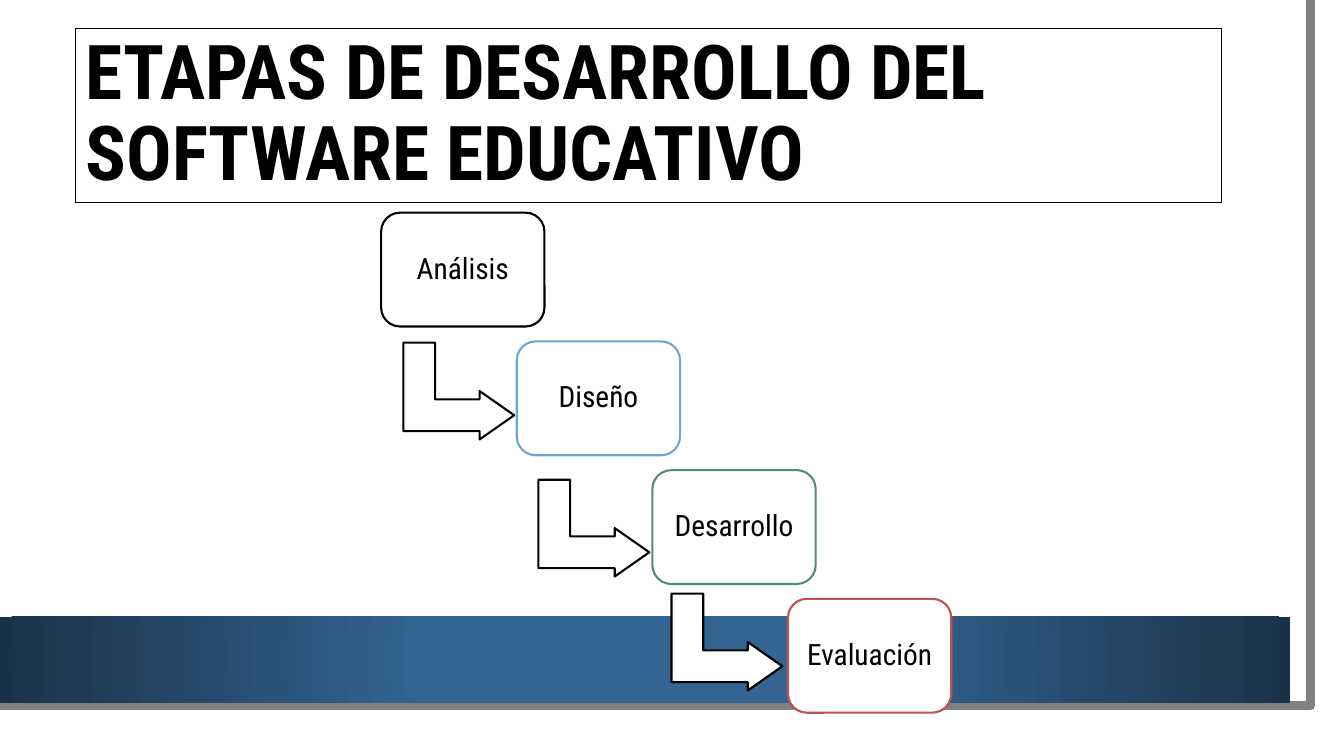
"""Build a slide showing the stages of educational software development."""
from lxml import etree
from pptx import Presentation
from pptx.dml.color import RGBColor
from pptx.enum.shapes import MSO_SHAPE
from pptx.enum.text import MSO_ANCHOR, MSO_AUTO_SIZE, PP_ALIGN
from pptx.oxml.ns import qn
from pptx.util import Inches, Pt

RECT, ROUNDED, BENT = MSO_SHAPE.RECTANGLE, MSO_SHAPE.ROUNDED_RECTANGLE, MSO_SHAPE.BENT_UP_ARROW
LEFT, CENTER = PP_ALIGN.LEFT, PP_ALIGN.CENTER
MIDDLE, NO_FIT = MSO_ANCHOR.MIDDLE, MSO_AUTO_SIZE.NONE
FONT = "Roboto Condensed"
WHITE = RGBColor(0xFF, 0xFF, 0xFF)
BLACK = RGBColor(0x00, 0x00, 0x00)
GRAY = RGBColor(0x80, 0x80, 0x80)
BAND_LIGHT = RGBColor(0x34, 0x64, 0x92)
BAND_DARK = RGBColor(0x1A, 0x32, 0x49)
BLUE = RGBColor(0x6D, 0xA5, 0xD4)
GREEN = RGBColor(0x53, 0x8C, 0x79)
RED = RGBColor(0xBB, 0x53, 0x54)

STAGES = [("Análisis", BLACK), ("Diseño", BLUE), ("Desarrollo", GREEN), ("Evaluación", RED)]
ARROWS = [(4.07, 3.33), (5.41, 4.69), (6.73, 5.82)]
BOX_LEFT, BOX_TOP, BOX_W, BOX_H = 3.78, 2.11, 1.62, 1.13
STEP_X, STEP_Y = 1.345, 1.277


def write(sp, text, size, bold=False, align=LEFT):
    tf = sp.text_frame
    tf.word_wrap = True
    tf.auto_size = NO_FIT
    tf.vertical_anchor = MIDDLE
    p = tf.paragraphs[0]
    p.alignment = align
    p.line_spacing = 0.9
    r = p.add_run()
    r.text = text
    r.font.name = FONT
    r.font.size = Pt(size)
    r.font.bold = bold
    r.font.color.rgb = BLACK


def outline(sp, color, width):
    sp.fill.solid()
    sp.fill.fore_color.rgb = WHITE
    sp.line.color.rgb = color
    sp.line.width = Pt(width)


prs = Presentation()
prs.slide_width, prs.slide_height = Inches(13.33), Inches(7.5)
s = prs.slides.add_slide(prs.slide_layouts[5])

builder = s.shapes.build_freeform(12.82, 0, scale=Inches(1))
builder.add_line_segments([(12.85, 7.02), (0, 7.01)], close=False)
frame = builder.convert_to_shape()
frame.shadow.inherit = False
frame.fill.background()
frame.line.color.rgb = GRAY
frame.line.width = Pt(6.5)

band = s.shapes.add_shape(RECT, 0, Inches(6.12), Inches(12.8), Inches(0.85))
band.shadow.inherit = False
band.line.fill.background()
band.fill.gradient()
for stop, color, position in zip(band.fill.gradient_stops, (BAND_LIGHT, BAND_DARK), (0.34, 1)):
    stop.color.rgb = color
    stop.position = position
grad = band.fill._xPr.find(qn("a:gradFill"))
lin = grad.find(qn("a:lin"))
radial = etree.Element(qn("a:path"), {"path": "circle"})
etree.SubElement(radial, qn("a:fillToRect"), dict.fromkeys("ltrb", "50000"))
grad.replace(lin, radial)

title = s.shapes.title
title.left, title.top, title.width, title.height = map(Inches, (0.75, 0.28, 11.37, 1.73))
outline(title, BLACK, 0.75)
write(title, "ETAPAS DE DESARROLLO DEL SOFTWARE EDUCATIVO", 54, bold=True)

for left, top in ARROWS:
    arrow = s.shapes.add_shape(BENT, Inches(left), Inches(top), Inches(0.96), Inches(1.1))
    arrow.shadow.inherit = False
    arrow.rotation = 90
    for i, value in enumerate((0.328, 0.25, 0.358)):
        arrow.adjustments[i] = value
    outline(arrow, BLACK, 1.5)

for i, (name, color) in enumerate(STAGES):
    box = s.shapes.add_shape(ROUNDED, Inches(BOX_LEFT + i * STEP_X), Inches(BOX_TOP + i * STEP_Y),
                             Inches(BOX_W), Inches(BOX_H))
    box.shadow.inherit = False
    outline(box, color, 1.5)
    tf = box.text_frame
    tf.margin_left = tf.margin_right = tf.margin_top = tf.margin_bottom = Inches(0.09)
    write(box, name, 21, align=CENTER)

prs.save("out.pptx")
